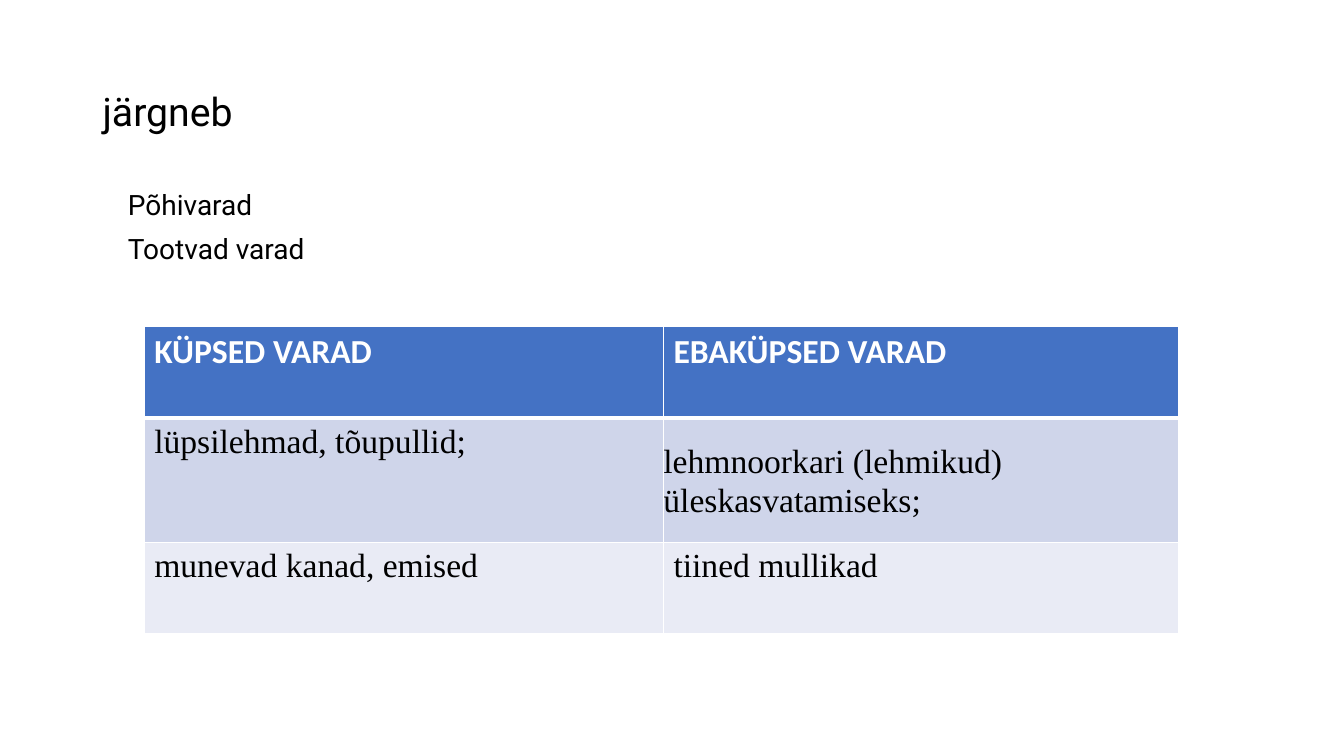
from lxml import etree
from pptx import Presentation
from pptx import util as u
from pptx.dml.color import RGBColor
from pptx.enum import text as t
from pptx.oxml import ns

INK = {"black": "000000", "white": "FFFFFF", "head": "4472C4",
       "odd": "CFD5EA", "even": "E9EBF5"}
ROWS = [("KÜPSED VARAD", "EBAKÜPSED VARAD"),
        ("lüpsilehmad, tõupullid;", "lehmnoorkari (lehmikud) üleskasvatamiseks;"),
        ("munevad kanad, emised", "tiined mullikad")]


def write(frame, *lines, font="Roboto", size=20, color="black", bold=False,
          lead=None, before=None, after=None):
    """Fill a text frame with one paragraph per line."""
    frame.word_wrap = True
    for i, line in enumerate(lines):
        para = frame.add_paragraph() if i else frame.paragraphs[0]
        para.line_spacing = lead
        para.space_before = before
        para.space_after = after
        run = para.add_run()
        run.text = line
        run.font.name = font
        run.font.size = u.Pt(size)
        run.font.bold = bold
        run.font.color.rgb = RGBColor.from_string(INK[color])


def box(slide, left, top, wide, high, *lines, anchor=t.MSO_ANCHOR.TOP, **form):
    """Add a text box placed in inches."""
    frame = slide.shapes.add_textbox(*map(u.Inches, (left, top, wide, high))).text_frame
    frame.vertical_anchor = anchor
    write(frame, *lines, **form)


def edge(cell, **widths):
    """Draw white cell borders with the given point widths."""
    props = cell._tc.get_or_add_tcPr()
    for i, (side, width) in enumerate(widths.items()):
        line = etree.Element(ns.qn(f"a:ln{side}"), w=str(u.Pt(width)))
        fill = etree.SubElement(line, ns.qn("a:solidFill"))
        etree.SubElement(fill, ns.qn("a:srgbClr"), val=INK["white"])
        props.insert(i, line)


def grid(slide, left, top, wides, highs):
    """Add the table of mature and immature assets."""
    size = left, top, sum(wides), sum(highs)
    table = slide.shapes.add_table(len(highs), len(wides), *map(u.Inches, size)).table
    for col, wide in zip(table.columns, wides):
        col.width = u.Inches(wide)
    for r, (high, fill) in enumerate(zip(highs, ("head", "odd", "even"))):
        table.rows[r].height = u.Inches(high)
        for c, words in enumerate(ROWS[r]):
            cell = table.cell(r, c)
            cell.fill.solid()
            cell.fill.fore_color.rgb = RGBColor.from_string(INK[fill])
            edge(cell, L=1, R=1, T=3 if r == 1 else 1, B=3 if r == 0 else 1)
            form = {"font": "Times New Roman"}
            if r == 0:
                form = {"font": "Calibri", "color": "white", "bold": True}
            elif (r, c) == (1, 1):
                form.update(lead=1.07, after=u.Pt(8))
                cell.vertical_anchor = t.MSO_ANCHOR.MIDDLE
                cell.margin_left = cell.margin_right = 0
                cell.margin_top = cell.margin_bottom = 0
            write(cell.text_frame, words, size=24, **form)


def main():
    """Build and save the slide."""
    deck = Presentation()
    deck.slide_width, deck.slide_height = u.Inches(13.33), u.Inches(7.5)
    slide = deck.slides.add_slide(deck.slide_layouts[6])
    box(slide, 0.92, 0.4, 11.5, 1.45, "järgneb", size=28, lead=0.9,
        anchor=t.MSO_ANCHOR.MIDDLE)
    box(slide, 1.17, 1.85, 11.5, 4.76, "Põhivarad", "Tootvad varad",
        lead=0.9, before=u.Pt(10))
    grid(slide, 1.43, 3.24, (5.15, 5.11), (0.91, 1.23, 0.91))
    deck.save("out.pptx")


if __name__ == "__main__":
    main()
